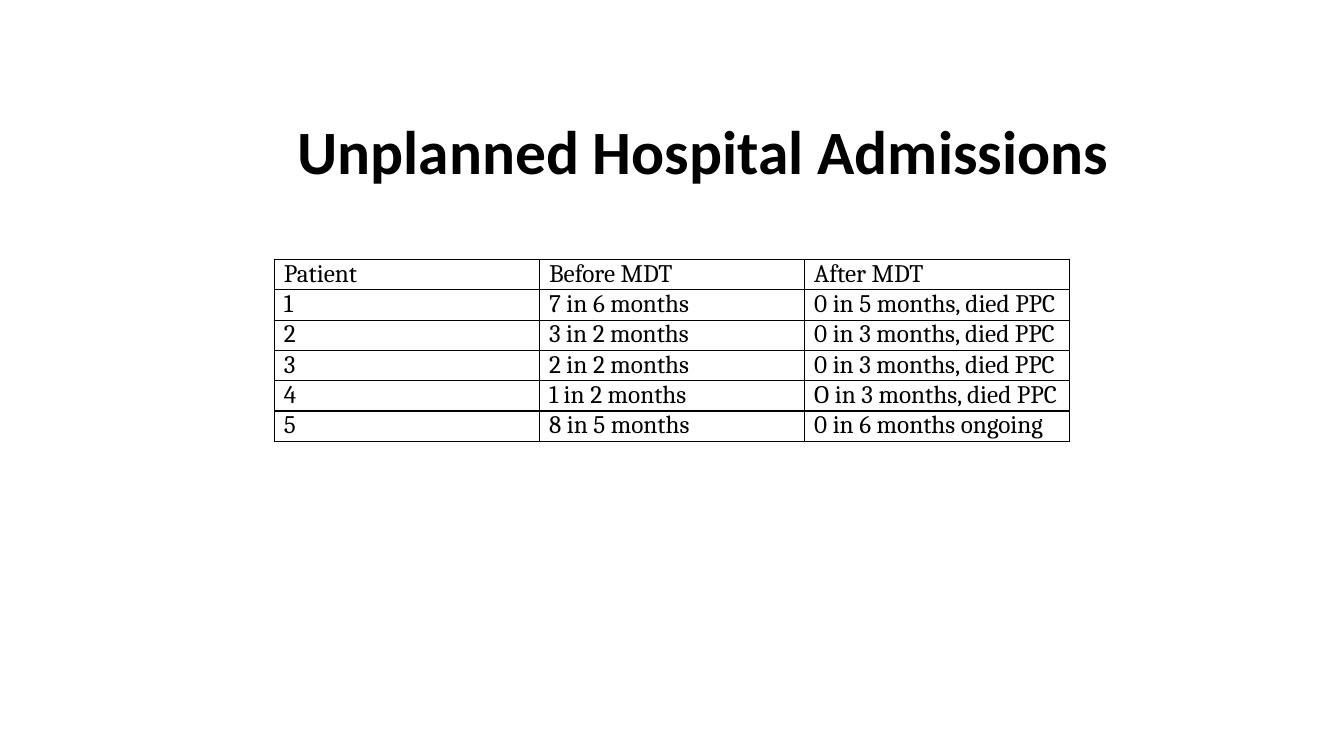
from lxml.etree import SubElement
from pptx import Presentation
from pptx.dml.color import RGBColor
from pptx.enum.text import PP_ALIGN
from pptx.oxml.ns import qn
from pptx.util import Pt

BLACK = RGBColor(0, 0, 0)
COL_WIDTH = Pt(189.4)
ROW_HEIGHT = Pt(21.65)
ADMISSIONS = [
    ("Patient", "Before MDT", "After MDT"),
    ("1", "7 in 6 months", "0 in 5 months, died PPC"),
    ("2", "3 in 2 months", "0 in 3 months, died PPC"),
    ("3", "2 in 2 months", "0 in 3 months, died PPC"),
    ("4", "1 in 2 months", "O in 3 months, died PPC"),
    ("5", "8 in 5 months", "0 in 6 months ongoing"),
]


def style_run(r, font, size, bold=False):
    r.font.name = font
    r.font.size = Pt(size)
    r.font.bold = bold
    r.font.color.rgb = BLACK


def add_borders(cell):
    tcPr = cell._tc.get_or_add_tcPr()
    for i, side in enumerate(("a:lnL", "a:lnR", "a:lnT", "a:lnB")):
        ln = SubElement(tcPr, qn(side), w=str(Pt(1)))
        fill = SubElement(ln, qn("a:solidFill"))
        SubElement(fill, qn("a:srgbClr"), val=str(BLACK))
        # borders come before the cell fill in the schema
        tcPr.insert(i, ln)


prs = Presentation()
prs.slide_width, prs.slide_height = Pt(960), Pt(540)
s = prs.slides.add_slide(prs.slide_layouts[6])

rows, cols = len(ADMISSIONS), len(ADMISSIONS[0])
table = s.shapes.add_table(rows, cols, Pt(196), Pt(185.4),
                           COL_WIDTH * cols, ROW_HEIGHT * rows).table
table.first_row = False
table.horz_banding = False
for col in table.columns:
    col.width = COL_WIDTH
for row, texts in zip(table.rows, ADMISSIONS):
    row.height = ROW_HEIGHT
    for cell, text in zip(row.cells, texts):
        cell.margin_left = cell.margin_right = Pt(6.85)
        cell.margin_top = cell.margin_bottom = Pt(0)
        cell.fill.background()
        add_borders(cell)
        p = cell.text_frame.paragraphs[0]
        p.text = text
        style_run(p.runs[0], "Cambria", 18)

title = s.shapes.add_textbox(Pt(79.2), Pt(77), Pt(846.7), Pt(60.5))
tf = title.text_frame
tf.word_wrap = True
p = tf.paragraphs[0]
p.text = "Unplanned Hospital Admissions"
p.alignment = PP_ALIGN.CENTER
style_run(p.runs[0], "Calibri", 44, bold=True)

prs.save("out.pptx")
